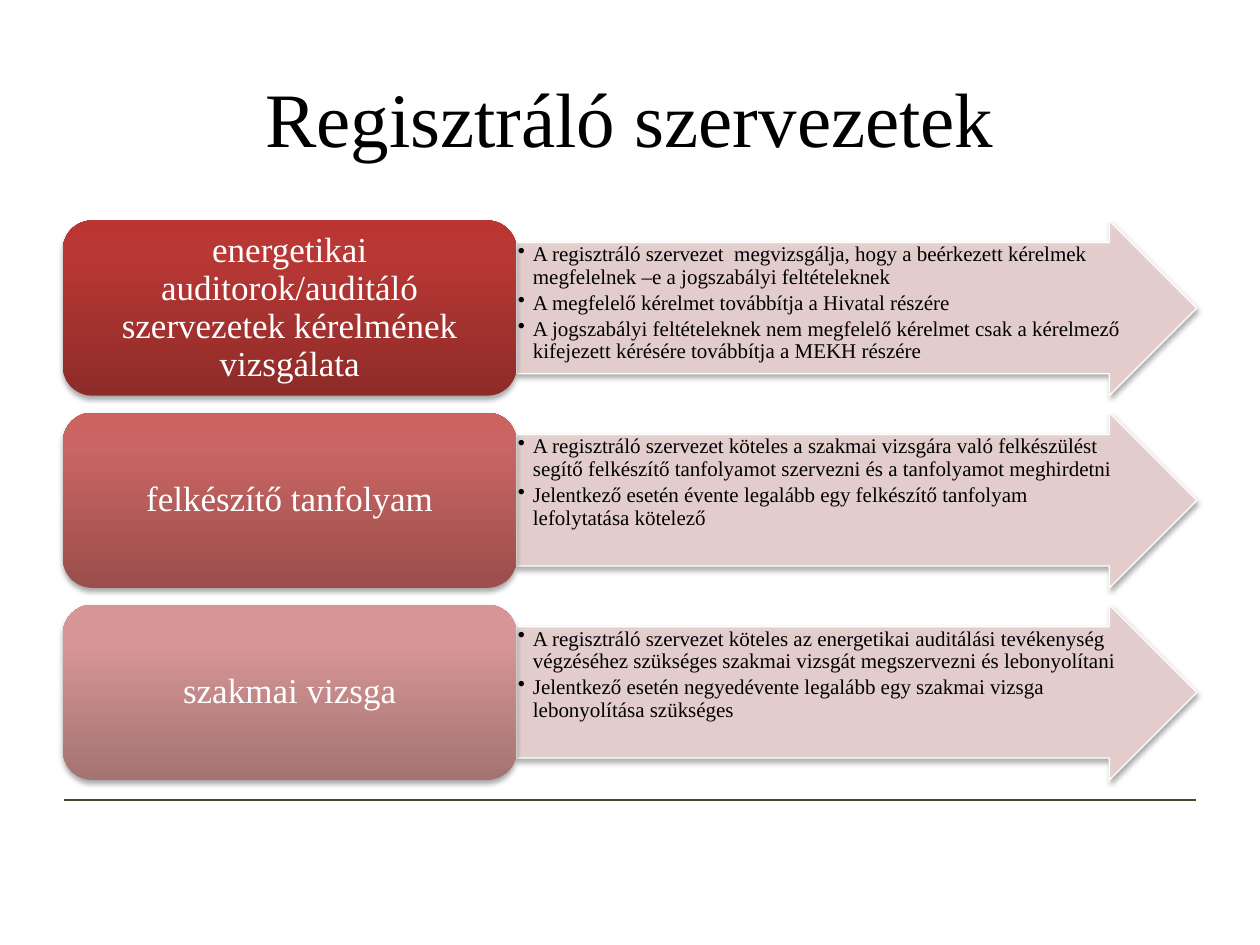
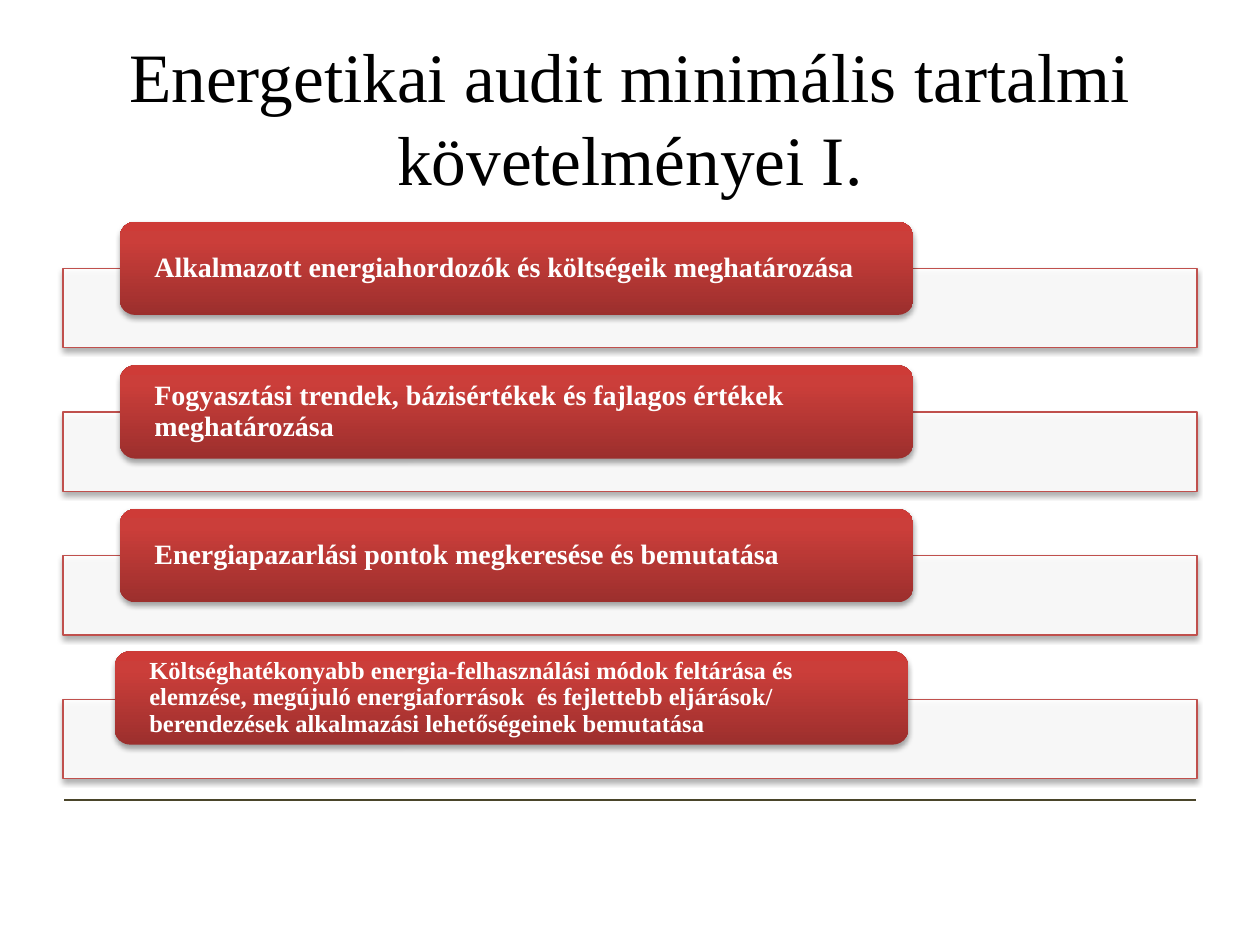
from copy import deepcopy

from lxml import etree
from pptx import Presentation
from pptx.dml.color import RGBColor
from pptx.enum.shapes import MSO_CONNECTOR, MSO_SHAPE
from pptx.enum.text import MSO_ANCHOR, PP_ALIGN
from pptx.oxml.ns import qn
from pptx.util import Inches, Pt

STRAIGHT = MSO_CONNECTOR.STRAIGHT
RECT, ROUNDED, ARROW = MSO_SHAPE.RECTANGLE, MSO_SHAPE.ROUNDED_RECTANGLE, MSO_SHAPE.RIGHT_ARROW
TOP, MIDDLE = MSO_ANCHOR.TOP, MSO_ANCHOR.MIDDLE
LEFT, CENTER = PP_ALIGN.LEFT, PP_ALIGN.CENTER

FONT = "Times New Roman"
BLACK = RGBColor(0x00, 0x00, 0x00)
WHITE = RGBColor(0xFF, 0xFF, 0xFF)
FOOTER_BROWN = RGBColor(0x4A, 0x45, 0x2A)
PALE_PINK = RGBColor(0xE8, 0xD0, 0xD0)
FRAME_RED = RGBColor(0xC0, 0x50, 0x4D)
DARK_RED = [RGBColor(0x8E, 0x2B, 0x28), RGBColor(0xB8, 0x38, 0x35), RGBColor(0xBB, 0x36, 0x32)]
MID_RED = [RGBColor(0x9B, 0x4E, 0x4C), RGBColor(0xC9, 0x65, 0x63), RGBColor(0xCC, 0x63, 0x61)]
LIGHT_RED = [RGBColor(0xA5, 0x73, 0x73), RGBColor(0xD7, 0x96, 0x95), RGBColor(0xD9, 0x95, 0x94)]
BRIGHT_RED = [RGBColor(0x9C, 0x2F, 0x2D), RGBColor(0xCB, 0x3E, 0x3A), RGBColor(0xCE, 0x3B, 0x37)]
STOPS = (0, 0.8, 1)

ORGANISATION_TASKS = [
    ("energetikai auditorok/auditáló szervezetek kérelmének vizsgálata", DARK_RED, [
        "A regisztráló szervezet  megvizsgálja, hogy a beérkezett kérelmek "
        "megfelelnek –e a jogszabályi feltételeknek",
        "A megfelelő kérelmet továbbítja a Hivatal részére",
        "A jogszabályi feltételeknek nem megfelelő kérelmet csak a kérelmező "
        "kifejezett kérésére továbbítja a MEKH részére",
    ]),
    ("felkészítő tanfolyam", MID_RED, [
        "A regisztráló szervezet köteles a szakmai vizsgára való felkészülést "
        "segítő felkészítő tanfolyamot szervezni és a tanfolyamot meghirdetni",
        "Jelentkező esetén évente legalább egy felkészítő tanfolyam lefolytatása kötelező",
    ]),
    ("szakmai vizsga", LIGHT_RED, [
        "A regisztráló szervezet köteles az energetikai auditálási tevékenység "
        "végzéséhez szükséges szakmai vizsgát megszervezni és lebonyolítani",
        "Jelentkező esetén negyedévente legalább egy szakmai vizsga lebonyolítása szükséges",
    ]),
]

AUDIT_REQUIREMENTS = [
    ("Alkalmazott energiahordozók és költségeik meghatározása", 16, 0.95, 1.76),
    ("Fogyasztási trendek, bázisértékek és fajlagos értékek meghatározása", 16, 0.95, 2.9),
    ("Energiapazarlási pontok megkeresése és bemutatása", 16, 0.95, 4.04),
    ("Költséghatékonyabb energia-felhasználási módok feltárása és elemzése, megújuló "
     "energiaforrások  és fejlettebb eljárások/ berendezések alkalmazási lehetőségeinek "
     "bemutatása", 14, 0.91, 5.17),
]


def add_alpha(color_element, percent):
    """Make an XML colour partly transparent."""
    etree.SubElement(color_element, qn("a:alpha"), val=str(percent * 1000))


def add_panel(s, kind, x, y, w, h):
    """Add a preset shape with the soft shadow below it."""
    sp = s.shapes.add_shape(kind, Inches(x), Inches(y), Inches(w), Inches(h))
    sp.shadow.inherit = False
    effects = sp._element.spPr.find(qn("a:effectLst"))
    shadow = etree.SubElement(effects, qn("a:outerShdw"), blurRad=str(Pt(3.1)), dist=str(Pt(1.8)),
                              dir="5400000", rotWithShape="0")
    add_alpha(etree.SubElement(shadow, qn("a:srgbClr"), val=str(BLACK)), 35)
    return sp


def add_outlined_panel(s, kind, x, y, w, h, fill, line):
    """Add a slightly transparent panel with a thin outline."""
    sp = add_panel(s, kind, x, y, w, h)
    sp.fill.solid()
    sp.fill.fore_color.rgb = fill
    add_alpha(sp._element.spPr.find(qn("a:solidFill"))[0], 90)
    sp.line.color.rgb = line
    sp.line.width = Pt(0.75)
    return sp


def add_gradient_panel(s, x, y, w, h, colors):
    """Add a rounded panel shaded from bottom to top."""
    sp = add_panel(s, ROUNDED, x, y, w, h)
    sp.line.fill.background()
    sp.fill.gradient()
    sp.fill.gradient_angle = 90
    stop_list = sp._element.spPr.find(".//" + qn("a:gsLst"))
    stop_list.append(deepcopy(stop_list[-1]))
    for stop, position, color in zip(sp.fill.gradient_stops, STOPS, colors):
        stop.position = position
        stop.color.rgb = color
    return sp


def set_text(sp, text, size, color, align=LEFT, anchor=MIDDLE, inset=(0, 0),
             bold=False, spacing=0.9):
    """Fill a shape with wrapped text and format every paragraph."""
    tf = sp.text_frame
    tf.word_wrap = True
    tf.vertical_anchor = anchor
    tf.margin_left = tf.margin_right = Inches(inset[0])
    tf.margin_top = tf.margin_bottom = Inches(inset[1])
    tf.text = text
    for p in tf.paragraphs:
        p.alignment = align
        p.line_spacing = spacing
        for r in p.runs:
            r.font.name = FONT
            r.font.size = Pt(size)
            r.font.bold = bold
            r.font.color.rgb = color


def add_bullets(tf):
    """Turn the paragraphs of a text frame into a bulleted list."""
    for p in tf.paragraphs:
        p.space_after = Pt(1.8)
        props = p._p.get_or_add_pPr()
        props.set("marL", str(Inches(0.12)))
        props.set("indent", str(Inches(-0.12)))
        etree.SubElement(props, qn("a:buChar"), char="•")


def add_base_slide(prs, title, size):
    """Add a blank slide with the footer rule and a centred title."""
    s = prs.slides.add_slide(prs.slide_layouts[6])
    rule = s.shapes.add_connector(STRAIGHT, Inches(0.51), Inches(6.35), Inches(9.49), Inches(6.35))
    rule.line.color.rgb = FOOTER_BROWN
    rule.line.width = Pt(0.75)
    etree.SubElement(rule._element.spPr, qn("a:effectLst"))
    box = s.shapes.add_textbox(Inches(0.5), Inches(0.3), Inches(9), Inches(1.25))
    set_text(box, title, size, BLACK, CENTER, inset=(0.1, 0.05), spacing=1.0)
    return s


def add_task_row(s, y, label, colors, points):
    """Add an arrow of bullet points led by a gradient label."""
    arrow = add_outlined_panel(s, ARROW, 4.1, y, 5.4, 1.39, PALE_PINK, WHITE)
    arrow.adjustments[0] = 0.75
    set_text(arrow, "\n".join(points), 12, BLACK, anchor=TOP, inset=(0.01, 0.01))
    add_bullets(arrow.text_frame)
    tag = add_gradient_panel(s, 0.5, y, 3.6, 1.39, colors)
    set_text(tag, label, 20, WHITE, CENTER, inset=(0.08, 0.04))


def add_requirement_row(s, frame_y, text, size, x, y):
    """Add a wide frame with a gradient heading over its top edge."""
    add_outlined_panel(s, RECT, 0.5, frame_y, 9, 0.63, WHITE, FRAME_RED)
    heading = add_gradient_panel(s, x, y, 6.3, 0.74, BRIGHT_RED)
    set_text(heading, text, size, WHITE, inset=(0.24, 0), bold=True)


def main():
    """Build both slides and save the presentation."""
    prs = Presentation()
    prs.slide_width, prs.slide_height = Inches(10), Inches(7.5)

    s = add_base_slide(prs, "Regisztráló szervezetek", 44)
    for i, (label, colors, points) in enumerate(ORGANISATION_TASKS):
        add_task_row(s, 1.75 + i * 1.525, label, colors, points)

    s = add_base_slide(prs, "Energetikai audit minimális tartalmi követelményei I.", 39.6)
    for i, requirement in enumerate(AUDIT_REQUIREMENTS):
        add_requirement_row(s, 2.13 + i * 1.14, *requirement)

    prs.save("out.pptx")


if __name__ == "__main__":
    main()
